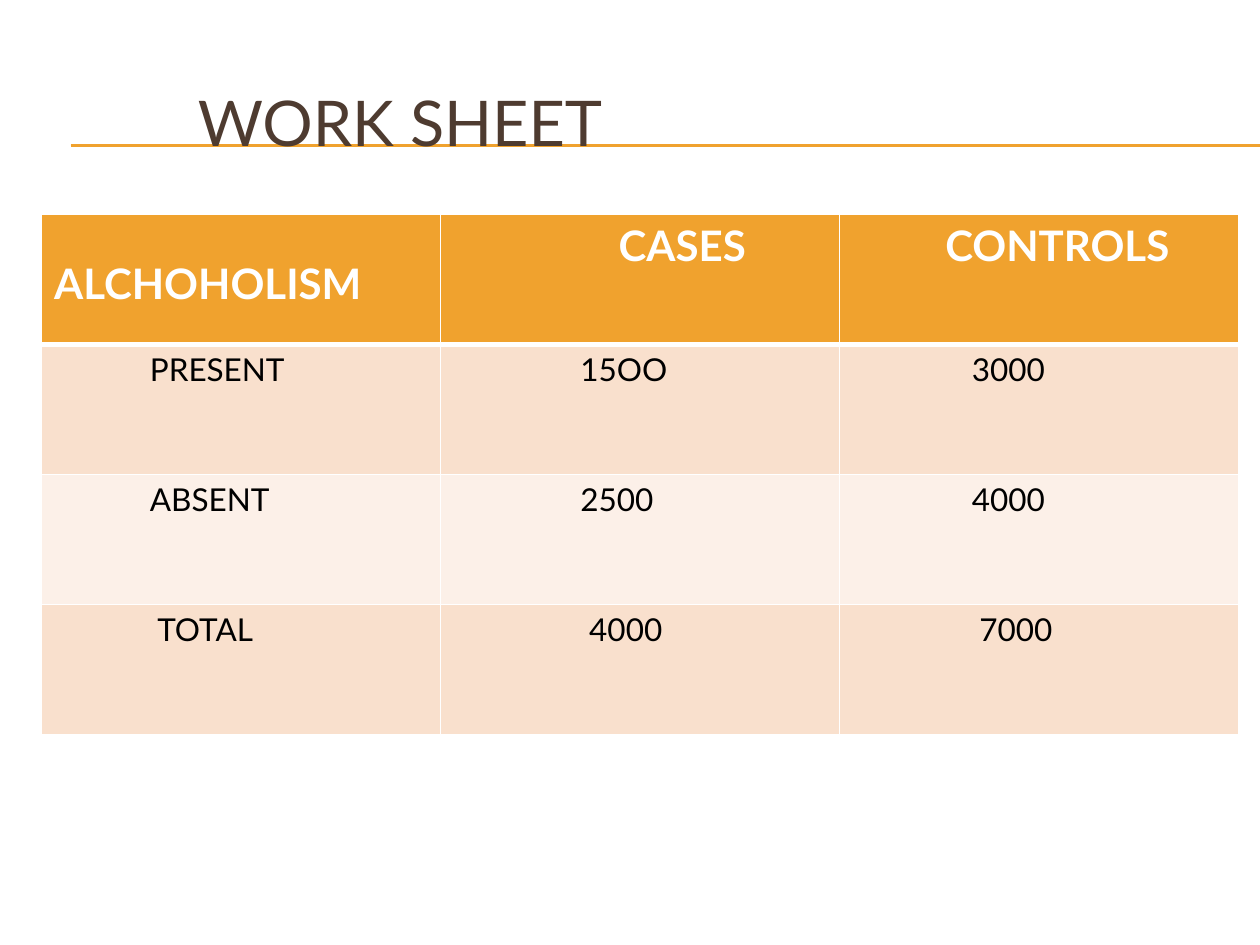
"""Build the work sheet slide comparing cases and controls."""
from lxml import etree
from pptx import Presentation
from pptx.dml.color import RGBColor
from pptx.enum.shapes import MSO_CONNECTOR
from pptx.enum.text import MSO_ANCHOR, PP_ALIGN
from pptx.oxml.ns import qn
from pptx.util import Inches, Pt

STRAIGHT = MSO_CONNECTOR.STRAIGHT
MIDDLE = MSO_ANCHOR.MIDDLE
LEFT, CENTER = PP_ALIGN.LEFT, PP_ALIGN.CENTER
ORANGE = RGBColor(0xF0, 0xA2, 0x2E)
BROWN = RGBColor(0x4E, 0x3B, 0x30)
PEACH = RGBColor(0xF9, 0xE0, 0xCD)
CREAM = RGBColor(0xFC, 0xF0, 0xE8)
WHITE = RGBColor(0xFF, 0xFF, 0xFF)
BLACK = RGBColor(0, 0, 0)

# text, left margin, top margin, alignment
HEADINGS = [
    ("ALCHOHOLISM", 0.1, 0.35, LEFT),
    ("CASES", 0.77, 0.05, CENTER),
    ("CONTROLS", 0.39, 0.05, CENTER),
]
BODY = [
    [("PRESENT", 0.86), ("15OO", 1.11), ("3000", 1.05)],
    [("ABSENT", 0.86), ("2500", 1.11), ("4000", 1.05)],
    [("TOTAL", 0.92), ("4000", 1.18), ("7000", 1.11)],
]


class SlideBuilder:
    """Hold the font and current slide and add styled elements."""

    def __init__(self, page, font="Lato"):
        self.page = page
        self.font = font

    def style(self, para, size, color, bold=False, align=LEFT):
        """Format a paragraph and its runs."""
        para.alignment = align
        for span in para.runs:
            span.font.name = self.font
            span.font.size = Pt(size)
            span.font.bold = bold
            span.font.color.rgb = color

    def rule(self, left, right, top):
        """Add a thin horizontal rule."""
        line = self.page.shapes.add_connector(
            STRAIGHT, Inches(left), Inches(top), Inches(right), Inches(top))
        line.line.color.rgb = ORANGE
        line.line.width = Pt(0.75)
        etree.SubElement(line._element.spPr, qn("a:effectLst"))

    def title(self, text, left, top, width, height, indent):
        """Add the indented slide title."""
        box = self.page.shapes.add_textbox(
            Inches(left), Inches(top), Inches(width), Inches(height))
        frame = box.text_frame
        frame.word_wrap = True
        frame.vertical_anchor = MIDDLE
        frame.margin_left = Inches(indent)
        frame.text = text
        self.style(frame.paragraphs[0], 36, BROWN)

    def table(self, left, top, width, height, rows, columns):
        """Add an empty table with equal rows and columns."""
        return self.page.shapes.add_table(
            rows, columns, Inches(left), Inches(top),
            Inches(width), Inches(height)).table

    def borders(self, cell, top=1, bottom=1):
        """Draw white borders around a cell."""
        properties = cell._tc.get_or_add_tcPr()
        widths = {"a:lnL": 1, "a:lnR": 1, "a:lnT": top, "a:lnB": bottom}
        for tag, width in widths.items():
            line = etree.SubElement(properties, qn(tag), w=str(Pt(width)))
            fill = etree.SubElement(line, qn("a:solidFill"))
            etree.SubElement(fill, qn("a:srgbClr"), val=str(WHITE))

    def cell(self, cell, text, fill, indent, size, color,
             bold=False, align=LEFT, offset=0.05, top=1, bottom=1):
        """Fill one table cell with formatted text."""
        self.borders(cell, top, bottom)
        cell.fill.solid()
        cell.fill.fore_color.rgb = fill
        cell.margin_left = Inches(indent)
        cell.margin_top = Inches(offset)
        cell.text_frame.text = text
        self.style(cell.text_frame.paragraphs[0], size, color, bold, align)


def main():
    """Build and save the deck."""
    deck = Presentation()
    deck.slide_width, deck.slide_height = Inches(10), Inches(7.5)
    builder = SlideBuilder(deck.slides.add_slide(deck.slide_layouts[6]))
    for top in (1.15, 1.16):
        builder.rule(0.56, 10, top)
    builder.title("WORK SHEET", 0.33, 0.5, 9.5, 0.92, indent=1.24)

    table = builder.table(0.33, 1.7, 9.5, 4.13, len(BODY) + 1, len(HEADINGS))
    for column, (text, indent, offset, align) in enumerate(HEADINGS):
        builder.cell(table.cell(0, column), text, ORANGE, indent, 24, WHITE,
                     bold=True, align=align, offset=offset, bottom=3)
    for row, values in enumerate(BODY, start=1):
        fill = PEACH if row % 2 else CREAM
        for column, (text, indent) in enumerate(values):
            builder.cell(table.cell(row, column), text, fill, indent, 18,
                         BLACK, top=3 if row == 1 else 1)
    deck.save("out.pptx")


if __name__ == "__main__":
    main()
